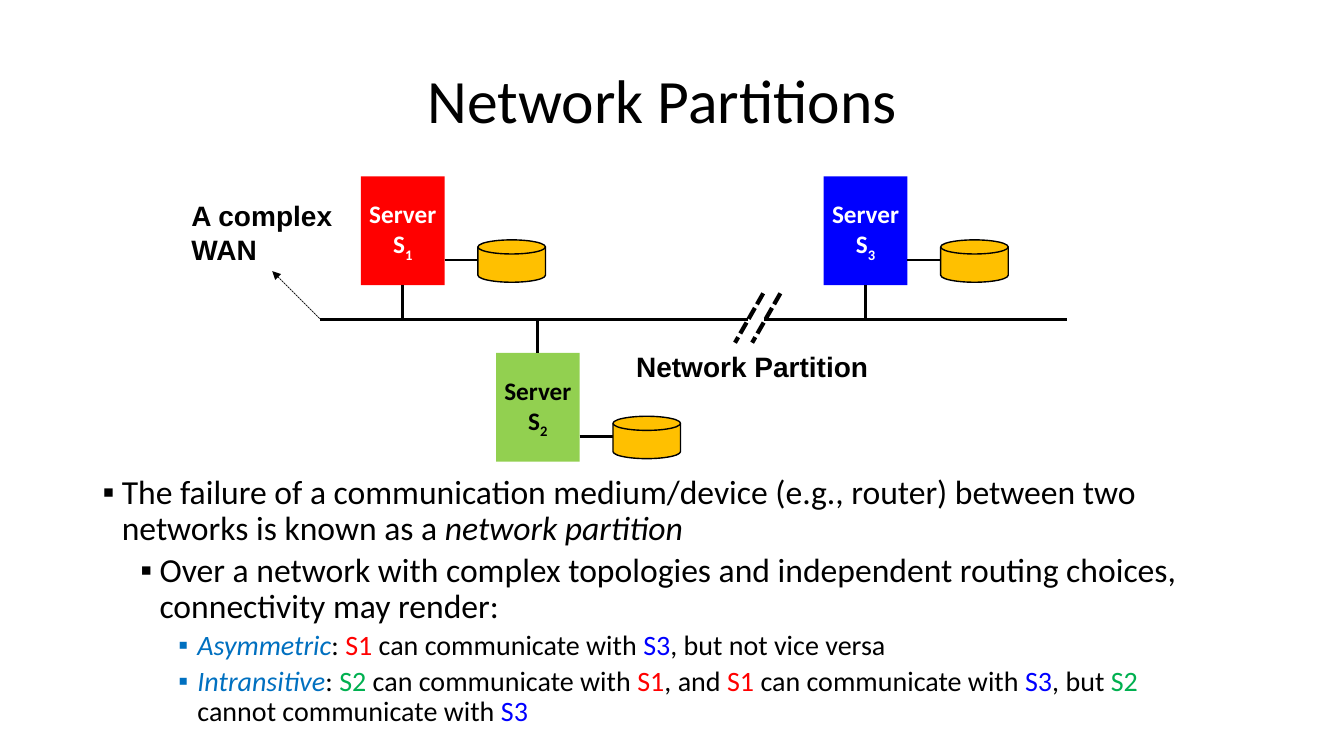
import pptx
import pptx.chart.data
import pptx.dml.color
import pptx.enum.dml
import pptx.enum.shapes
import pptx.enum.text
import pptx.oxml.ns
import pptx.util
import lxml.etree

Inches = pptx.util.Inches
Pt = pptx.util.Pt
SHAPES = pptx.enum.shapes.MSO_SHAPE
ALIGN = pptx.enum.text.PP_ALIGN
ANCHOR = pptx.enum.text.MSO_ANCHOR
qn = pptx.oxml.ns.qn


def color(value):
    return pptx.dml.color.RGBColor.from_string(value)


def add_line(start, end, width, dash=None):
    line = slide.shapes.add_connector(
        pptx.enum.shapes.MSO_CONNECTOR.STRAIGHT,
        Inches(start[0]), Inches(start[1]), Inches(end[0]), Inches(end[1]))
    line.line.color.rgb = color("000000")
    line.line.width = Pt(width)
    if dash:
        line.line.dash_style = dash
    lxml.etree.SubElement(line._element.spPr, qn("a:effectLst"))
    return line


presentation = pptx.Presentation()
presentation.slide_width = Inches(13.33)
presentation.slide_height = Inches(7.5)
slide = presentation.slides.add_slide(presentation.slide_layouts[6])

title = slide.shapes.add_textbox(Inches(0.92), Inches(0.3), Inches(11.3), Inches(1.45))
title.text_frame.word_wrap = True
title.text_frame.vertical_anchor = ANCHOR.MIDDLE
title.text_frame.text = "Network Partitions"
paragraph = title.text_frame.paragraphs[0]
paragraph.alignment = ALIGN.CENTER
paragraph.line_spacing = 0.9
paragraph.runs[0].font.name = "Calibri"
paragraph.runs[0].font.size = Pt(44)
paragraph.runs[0].font.color.rgb = color("000000")

BLACK, BLUE, RED, GREEN, NAVY = "000000", "0070C0", "FF0000", "00B050", "0000FF"
body_paragraphs = [
    (0, 24, 0, [
        ("The failure of a communication medium/device (e.g., router) between two "
         "networks is known as a ", BLACK, False),
        ("network partition", BLACK, True)]),
    (1, 24, 3.8, [
        ("Over a network with complex topologies and independent routing choices, "
         "connectivity may render:", BLACK, False)]),
    (2, 20, 3.8, [
        ("Asymmetric", BLUE, True), (": ", BLACK, False), ("S1", RED, False),
        (" can communicate with ", BLACK, False), ("S3", NAVY, False),
        (", but not vice versa", BLACK, False)]),
    (2, 20, 3.8, [
        ("Intransitive", BLUE, True), (": ", BLACK, False), ("S2", GREEN, False),
        (" can communicate with ", BLACK, False), ("S1", RED, False),
        (", and ", BLACK, False), ("S1", RED, False),
        (" can communicate with ", BLACK, False), ("S3", NAVY, False),
        (", but ", BLACK, False), ("S2", GREEN, False),
        (" cannot communicate with ", BLACK, False), ("S3", NAVY, False)]),
]
body = slide.shapes.add_textbox(Inches(0.92), Inches(4.67), Inches(11.3), Inches(2.67))
body.text_frame.word_wrap = True
for index, (level, size, space_before, runs) in enumerate(body_paragraphs):
    paragraph = body.text_frame.paragraphs[0] if index == 0 else body.text_frame.add_paragraph()
    properties = paragraph._p.get_or_add_pPr()
    properties.set("marL", str(Inches(0.19 + 0.375 * level)))
    properties.set("indent", str(Inches(-0.19)))
    lxml.etree.SubElement(properties, qn("a:buFont")).set("typeface", "Arial")
    lxml.etree.SubElement(properties, qn("a:buChar")).set("char", "▪")
    paragraph.level = level
    paragraph.line_spacing = 0.9
    paragraph.space_before = Pt(space_before)
    for text, run_color, italic in runs:
        run = paragraph.add_run()
        run.text = text
        run.font.name = "Calibri"
        run.font.size = Pt(size)
        run.font.italic = italic
        run.font.color.rgb = color(run_color)

BUS_Y = 3.17
SERVER_WIDTH, SERVER_HEIGHT = 0.83, 1.08
for start_x, end_x in [(3.17, 7.42), (7.58, 10.58)]:
    add_line((start_x, BUS_Y), (end_x, BUS_Y), 2.5)

servers = [
    ("1", 3.58, 1.75, "FF0000", "FFFFFF"),
    ("2", 4.92, 3.5, "92D050", "000000"),
    ("3", 8.17, 1.75, "0000FF", "FFFFFF"),
]
for number, left, top, fill, text_color in servers:
    server = slide.shapes.add_shape(
        SHAPES.RECTANGLE, Inches(left), Inches(top), Inches(SERVER_WIDTH), Inches(SERVER_HEIGHT))
    server.shadow.inherit = False
    server.fill.solid()
    server.fill.fore_color.rgb = color(fill)
    server.line.fill.background()
    frame = server.text_frame
    frame.margin_left = frame.margin_right = 0
    frame.vertical_anchor = ANCHOR.MIDDLE
    frame.text = "Server\nS"
    subscript = frame.paragraphs[1].add_run()
    subscript.text = number
    subscript.font._element.set("baseline", "-25000")
    for paragraph in frame.paragraphs:
        paragraph.alignment = ALIGN.CENTER
        for run in paragraph.runs:
            run.font.name = "Calibri"
            run.font.size = Pt(18)
            run.font.bold = True
            run.font.color.rgb = color(text_color)

    right = left + SERVER_WIDTH
    add_line((right, top + 0.83), (right + 0.33, top + 0.83), 2)
    disk = slide.shapes.add_shape(
        SHAPES.FLOWCHART_MAGNETIC_DISK,
        Inches(right + 0.33), Inches(top + 0.63), Inches(0.67), Inches(0.42))
    disk.shadow.inherit = False
    disk.fill.solid()
    disk.fill.fore_color.rgb = color("FFC000")
    disk.line.color.rgb = color("000000")
    disk.line.width = Pt(1)

    above_bus = top < BUS_Y
    center = left + SERVER_WIDTH / 2
    edge = top + SERVER_HEIGHT if above_bus else top
    link = add_line((center, edge), (center, BUS_Y), 2)
    link.begin_connect(server, 2 if above_bus else 0)

SQUARE_DOT = pptx.enum.dml.MSO_LINE.SQUARE_DOT
for top_x in (7.57, 7.74):
    add_line((top_x, 2.91), (top_x - 0.28, 3.4), 3, SQUARE_DOT)

pointer = add_line((3.17, 3.16), (2.7, 2.69), 0.5, SQUARE_DOT)
lxml.etree.SubElement(pointer.line._get_or_add_ln(), qn("a:tailEnd")).set("type", "triangle")

labels = [
    ("Network Partition", 6.21, 3.42, 2.52, 0.44),
    ("A complex\nWAN", 1.8, 1.92, 1.69, 0.77),
]
for text, left, top, width, height in labels:
    label = slide.shapes.add_textbox(Inches(left), Inches(top), Inches(width), Inches(height))
    label.text_frame.word_wrap = False
    label.text_frame.auto_size = pptx.enum.text.MSO_AUTO_SIZE.SHAPE_TO_FIT_TEXT
    label.text_frame.text = text
    for paragraph in label.text_frame.paragraphs:
        paragraph.runs[0].font.name = "Arial"
        paragraph.runs[0].font.size = Pt(20)
        paragraph.runs[0].font.bold = True
        paragraph.runs[0].font.color.rgb = color("000000")

presentation.save("out.pptx")
